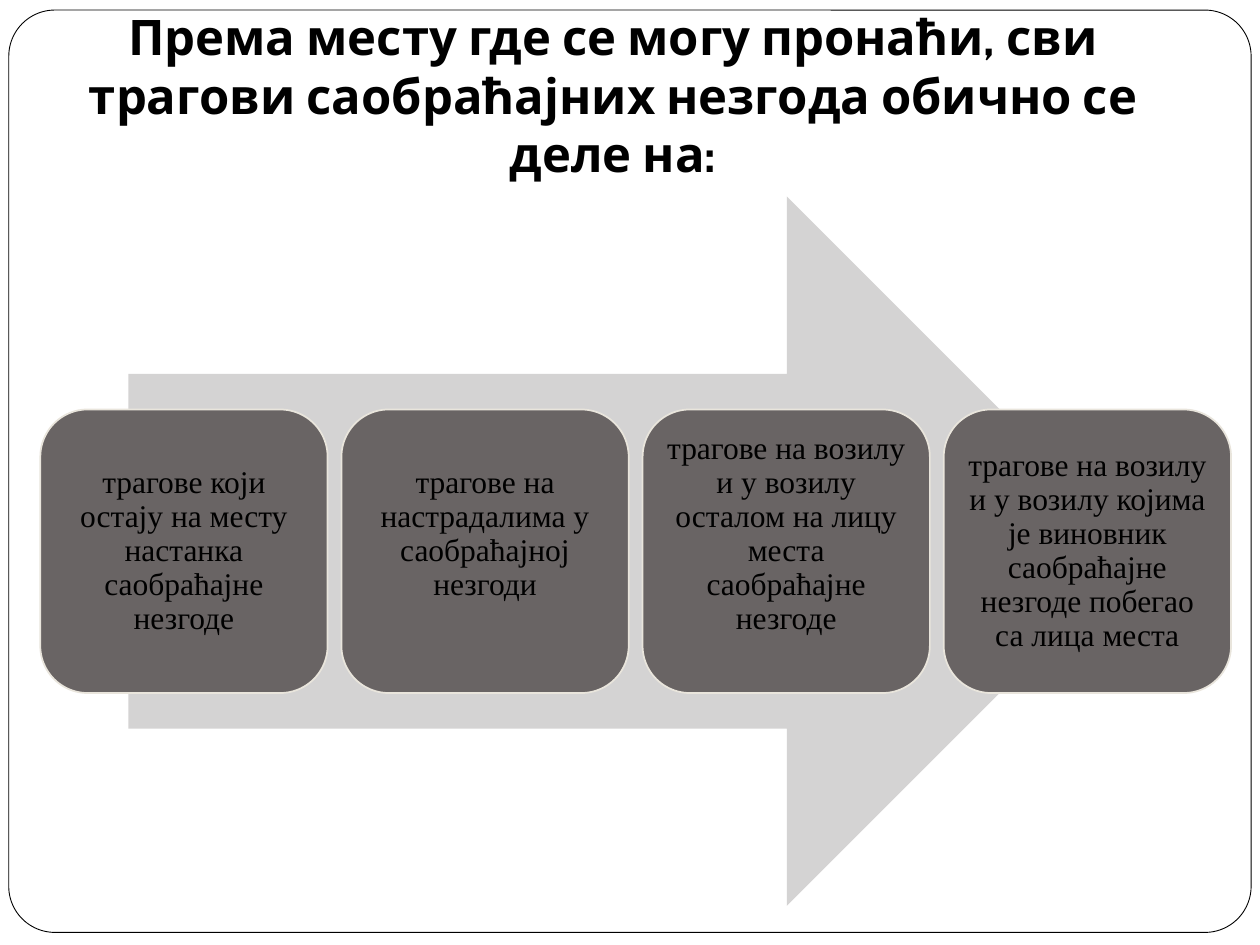
from pptx import Presentation
from pptx.dml.color import RGBColor
from pptx.enum.shapes import MSO_SHAPE as Preset
from pptx.enum.text import MSO_ANCHOR as Anchor, PP_ALIGN as Align
from pptx.util import Inches, Pt

TITLE = "Према месту где се могу пронаћи, сви трагови саобраћајних незгода обично се деле на:"
LINE_ROOM = 0.27
CARDS = [
    ("трагове који остају на месту настанка саобраћајне незгоде", 0),
    ("трагове на настрадалима у саобраћајној незгоди", LINE_ROOM),
    ("трагове на возилу и у возилу осталом на лицу места саобраћајне незгоде", LINE_ROOM),
    ("трагове на возилу и у возилу којима је виновник саобраћајне незгоде побегао са лица места", 0),
]
CARD_LEFT, CARD_STEP = 0.32, 2.39


def color(value):
    return RGBColor.from_string(value)


def add_preset(page, preset, left, top, width, height, fill, line=None, line_width=1):
    shape = page.shapes.add_shape(
        preset, Inches(left), Inches(top), Inches(width), Inches(height))
    shape.shadow.inherit = False
    shape.fill.solid()
    shape.fill.fore_color.rgb = color(fill)
    if line:
        shape.line.color.rgb = color(line)
        shape.line.width = Pt(line_width)
    else:
        shape.line.fill.background()
    return shape


def write_text(box, text, font, size, bold=False, anchor=Anchor.MIDDLE,
               insets=(0.07, 0.07, 0.07, 0.07), spacing=1.0):
    frame = box.text_frame
    frame.word_wrap = True
    frame.vertical_anchor = anchor
    left, top, right, bottom = insets
    frame.margin_left, frame.margin_top = Inches(left), Inches(top)
    frame.margin_right, frame.margin_bottom = Inches(right), Inches(bottom)
    para = frame.paragraphs[0]
    para.alignment = Align.CENTER
    para.line_spacing = spacing
    span = para.add_run()
    span.text = text
    span.font.name = font
    span.font.size = Pt(size)
    span.font.bold = bold
    span.font.color.rgb = color("000000")


def add_title(page):
    box = page.shapes.add_textbox(Inches(0.23), Inches(0.16), Inches(9.27), Inches(1.39))
    write_text(box, TITLE, "Cabin", 28, bold=True, anchor=Anchor.BOTTOM,
               insets=(0.1, 0.05, 0.1, 0.1))


def add_card(page, left, text, room_below):
    card = add_preset(page, Preset.ROUNDED_RECTANGLE, left, 3.25, 2.28, 2.25,
                      "696464", line="E9E5DC")
    write_text(card, text, "Times New Roman", 18, spacing=0.9,
               insets=(0.07, 0.07, 0.07, 0.07 + room_below))


def main():
    deck = Presentation()
    deck.slide_width, deck.slide_height = Inches(10), Inches(7.5)
    page = deck.slides.add_slide(deck.slide_layouts[6])
    border = add_preset(page, Preset.ROUNDED_RECTANGLE, 0.07, 0.08, 9.86, 7.32,
                        "FFFFFF", line="000000", line_width=0.5)
    border.adjustments[0] = 0.05
    add_title(page)
    add_preset(page, Preset.RIGHT_ARROW, 1.02, 1.56, 8.04, 5.63, "D4D3D3")
    for index, (text, room_below) in enumerate(CARDS):
        add_card(page, CARD_LEFT + index * CARD_STEP, text, room_below)
    deck.save("out.pptx")


if __name__ == "__main__":
    main()
